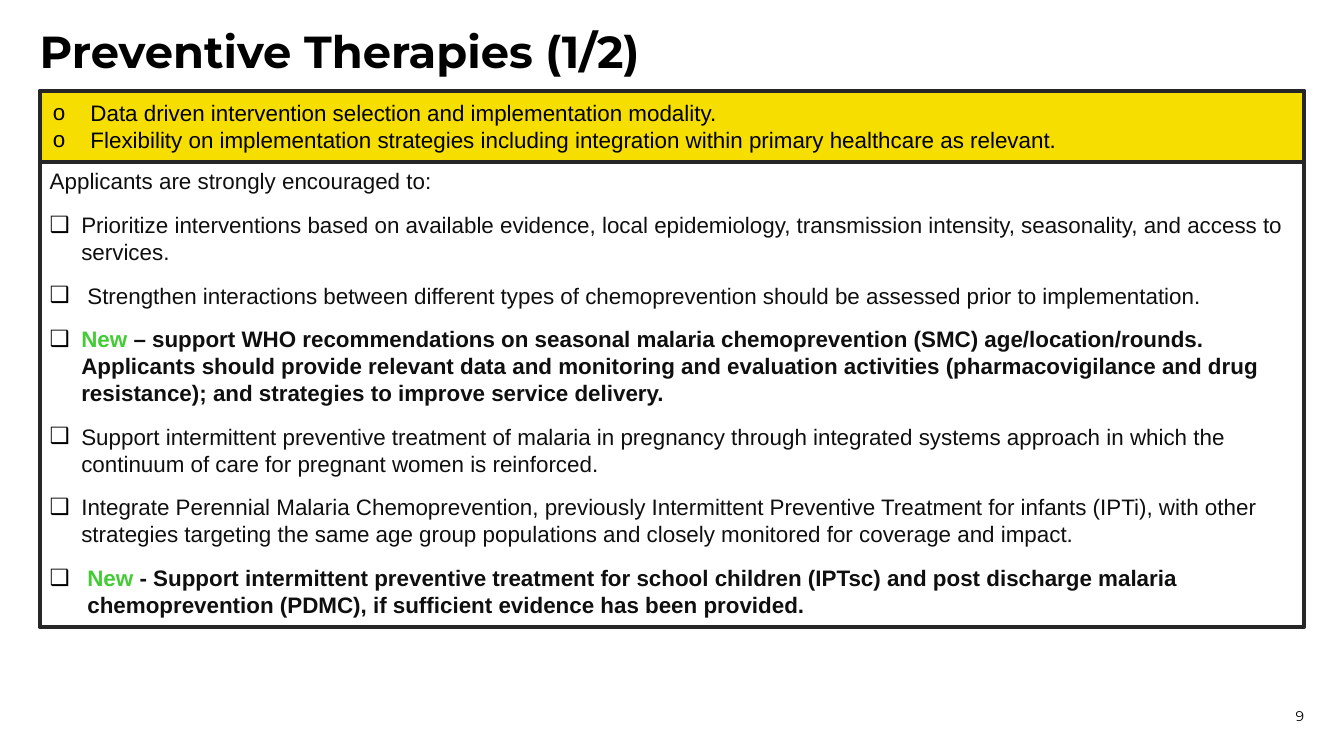
from lxml import etree
from pptx import Presentation
from pptx.dml.color import RGBColor
from pptx.enum.shapes import MSO_SHAPE
from pptx.enum.text import MSO_ANCHOR, MSO_AUTO_SIZE, PP_ALIGN
from pptx.oxml.ns import qn
from pptx.util import Pt

PX = 4572  # EMU in one px, 200 px to the inch
RECT = MSO_SHAPE.RECTANGLE
TOP, MIDDLE, BOTTOM = MSO_ANCHOR.TOP, MSO_ANCHOR.MIDDLE, MSO_ANCHOR.BOTTOM
LEFT, RIGHT = PP_ALIGN.LEFT, PP_ALIGN.RIGHT
FIXED = MSO_AUTO_SIZE.NONE

BLACK = RGBColor(0x00, 0x00, 0x00)
INK = RGBColor(0x0F, 0x0F, 0x0F)
EDGE = RGBColor(0x26, 0x26, 0x26)
WHITE = RGBColor(0xFF, 0xFF, 0xFF)
YELLOW = RGBColor(0xF6, 0xDE, 0x00)
GREEN = RGBColor(0x44, 0xCC, 0x36)

HEAD, BODY = "Montserrat", "Arial"
NEW = "New"

# Key points, then advice as (indent in px, text); a leading NEW marks new advice
POINTS = [
    "Data driven intervention selection and implementation modality.",
    "Flexibility on implementation strategies including integration within "
    "primary healthcare as relevant.",
]
INTRO = "Applicants are strongly encouraged to:"
ADVICE = [
    (47, "Prioritize interventions based on available evidence, local epidemiology, "
         "transmission intensity, seasonality, and access to services."),
    (56, "Strengthen interactions between different types of chemoprevention should "
         "be assessed prior to implementation."),
    (47, "New – support WHO recommendations on seasonal malaria chemoprevention (SMC) "
         "age/location/rounds. Applicants should provide relevant data and monitoring "
         "and evaluation activities (pharmacovigilance and drug resistance); and "
         "strategies to improve service delivery."),
    (47, "Support intermittent preventive treatment of malaria in pregnancy through "
         "integrated systems approach in which the continuum of care for pregnant "
         "women is reinforced."),
    (47, "Integrate Perennial Malaria Chemoprevention, previously Intermittent "
         "Preventive Treatment for infants (IPTi), with other strategies targeting the "
         "same age group populations and closely monitored for coverage and impact."),
    (56, "New - Support intermittent preventive treatment for school children (IPTsc) "
         "and post discharge malaria chemoprevention (PDMC), if sufficient evidence "
         "has been provided."),
]


class Deck:
    def __init__(self, wide, high):
        self.prs = Presentation()
        self.prs.slide_width, self.prs.slide_height = wide * PX, high * PX
        self.slide = self.prs.slides.add_slide(self.prs.slide_layouts[1])

    def place(self, shape, box):
        shape.left, shape.top, shape.width, shape.height = (n * PX for n in box)

    def frame(self, shape, inset, anchor):
        frame = shape.text_frame
        frame.word_wrap, frame.auto_size = True, FIXED
        frame.vertical_anchor = anchor
        frame.margin_left = frame.margin_right = inset[0] * PX
        frame.margin_top = frame.margin_bottom = inset[1] * PX
        return frame

    def style(self, run, size, font, color, bold=False):
        run.font.size, run.font.name = Pt(size), font
        run.font.color.rgb, run.font.bold = color, bold

    def paint(self, shape, fill):
        shape.fill.solid()
        shape.fill.fore_color.rgb = fill
        shape.line.color.rgb, shape.line.width = EDGE, Pt(2.25)

    def bullet(self, para, mark, indent):
        props = para._p.get_or_add_pPr()
        props.set("marL", str(indent * PX))
        props.set("indent", str(-indent * PX))
        if not mark:
            etree.SubElement(props, qn("a:buNone"))
            return
        color = etree.SubElement(props, qn("a:buClr"))
        etree.SubElement(color, qn("a:srgbClr")).set("val", str(BLACK))
        etree.SubElement(props, qn("a:buFont")).set("typeface", BODY)
        etree.SubElement(props, qn("a:buChar")).set("char", mark)

    def items(self, frame, rows, color, after=0):
        """Fill a frame with rows of (mark, indent, text)."""
        for i, (mark, indent, text) in enumerate(rows):
            para = frame.add_paragraph() if i else frame.paragraphs[0]
            self.bullet(para, mark, indent)
            para.alignment, para.line_spacing = LEFT, 1.0
            para.space_before, para.space_after = Pt(0), Pt(after)
            fresh = text.startswith(NEW)
            parts = [NEW, text[len(NEW):]] if fresh else [text]
            for part in parts:
                run = para.add_run()
                run.text = part
                self.style(run, 12, BODY, GREEN if part == NEW else color, fresh)

    def title(self, text, box):
        shape = self.slide.shapes.title
        self.place(shape, box)
        frame = self.frame(shape, (0, 0), TOP)
        frame.text = text
        para = frame.paragraphs[0]
        para.alignment, para.line_spacing = LEFT, 0.9
        self.style(para.runs[0], 24, HEAD, BLACK, True)

    def banner(self, points, box):
        shape = self.slide.shapes.add_shape(RECT, *(n * PX for n in box))
        shape.shadow.inherit = False
        self.paint(shape, YELLOW)
        frame = self.frame(shape, (20, 10), MIDDLE)
        self.items(frame, [("o", 56, text) for text in points], BLACK)

    def panel(self, intro, advice, box):
        shape = self.slide.placeholders[1]
        self.place(shape, box)
        self.paint(shape, WHITE)
        frame = self.frame(shape, (15, 8), TOP)
        rows = [(None, 0, intro)] + [("❑", *row) for row in advice]
        self.items(frame, rows, INK, 9)

    def number(self, text, box):
        shape = self.slide.shapes.add_textbox(*(n * PX for n in box))
        frame = self.frame(shape, (0, 0), BOTTOM)
        frame.text = text
        frame.paragraphs[0].alignment = RIGHT
        self.style(frame.paragraphs[0].runs[0], 7.5, HEAD, BLACK)


def main():
    deck = Deck(2000, 1125)
    # Heading
    deck.title("Preventive Therapies (1/2)", (59, 44, 1822, 90))
    # Key points above the advice
    deck.banner(POINTS, (59, 135, 1882, 106))
    deck.panel(INTRO, ADVICE, (59, 241, 1882, 692))
    # Page number
    deck.number("9", (1793, 1018, 148, 60))
    deck.prs.save("out.pptx")


if __name__ == "__main__":
    main()
